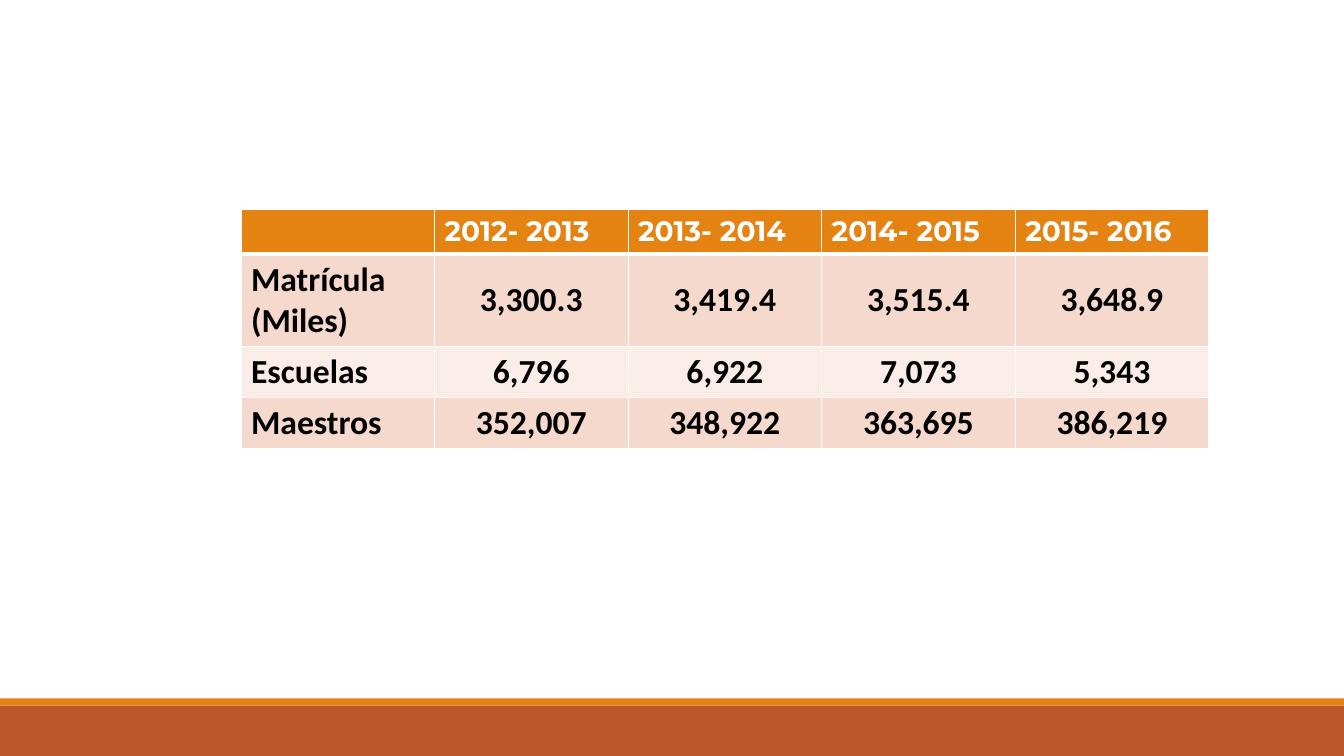
from lxml.etree import SubElement
from pptx import Presentation
from pptx.dml.color import RGBColor
from pptx.enum.shapes import MSO_SHAPE
from pptx.enum.text import MSO_ANCHOR, PP_ALIGN
from pptx.oxml.ns import qn
from pptx.util import Inches, Pt

COLORS = {
    "orange": "E48312",
    "rust": "BD582C",
    "peach": "F5D9CC",
    "pale": "FAEDE7",
    "white": "FFFFFF",
    "black": "000000",
}

ROWS = [
    ["", "2012- 2013", "2013- 2014", "2014- 2015", "2015- 2016"],
    ["Matrícula (Miles)", "3,300.3", "3,419.4", "3,515.4", "3,648.9"],
    ["Escuelas", "6,796", "6,922", "7,073", "5,343"],
    ["Maestros", "352,007", "348,922", "363,695", "386,219"],
]
HEIGHTS = [0.43, 0.91, 0.51, 0.51]


class Deck:
    def __init__(self, slide):
        self.slide = slide

    def color(self, name):
        return RGBColor.from_string(COLORS[name])

    def band(self, top, height, fill):
        shape = self.slide.shapes.add_shape(
            MSO_SHAPE.RECTANGLE, 0, Inches(top), Inches(13.33), Inches(height))
        shape.shadow.inherit = False
        shape.fill.solid()
        shape.fill.fore_color.rgb = self.color(fill)
        shape.line.fill.background()

    def border(self, cell, row):
        props = cell._tc.get_or_add_tcPr()
        for side in "LRTB":
            thick = (row, side) in [(0, "B"), (1, "T")]
            line = SubElement(props, qn(f"a:ln{side}"), w=str(Pt(3 if thick else 1)))
            fill = SubElement(line, qn("a:solidFill"))
            SubElement(fill, qn("a:srgbClr"), val=COLORS["white"])

    def cell(self, cell, text, row, col):
        head = row == 0
        self.border(cell, row)
        cell.fill.solid()
        fill = "orange" if head else "peach" if row % 2 else "pale"
        cell.fill.fore_color.rgb = self.color(fill)
        cell.text = text
        para = cell.text_frame.paragraphs[0]
        if not head and col:
            cell.vertical_anchor = MSO_ANCHOR.MIDDLE
            para.alignment = PP_ALIGN.CENTER
        font = para.font
        font.name = "Montserrat" if head else "Calibri"
        font.size = Pt(20 if head else 24)
        font.bold = True
        font.color.rgb = self.color("white" if head else "black")

    def table(self, left, top, width, rows, heights):
        table = self.slide.shapes.add_table(
            len(rows), len(rows[0]), Inches(left), Inches(top),
            Inches(width), Inches(sum(heights))).table
        for row, (texts, height) in enumerate(zip(rows, heights)):
            table.rows[row].height = Inches(height)
            for col, text in enumerate(texts):
                self.cell(table.cell(row, col), text, row, col)


def main():
    show = Presentation()
    show.slide_width = Inches(13.33)
    show.slide_height = Inches(7.5)
    deck = Deck(show.slides.add_slide(show.slide_layouts[6]))
    deck.band(7, 0.5, "rust")
    deck.band(6.93, 0.07, "orange")
    deck.table(2.39, 2.08, 9.6, ROWS, HEIGHTS)
    show.save("out.pptx")


if __name__ == "__main__":
    main()
